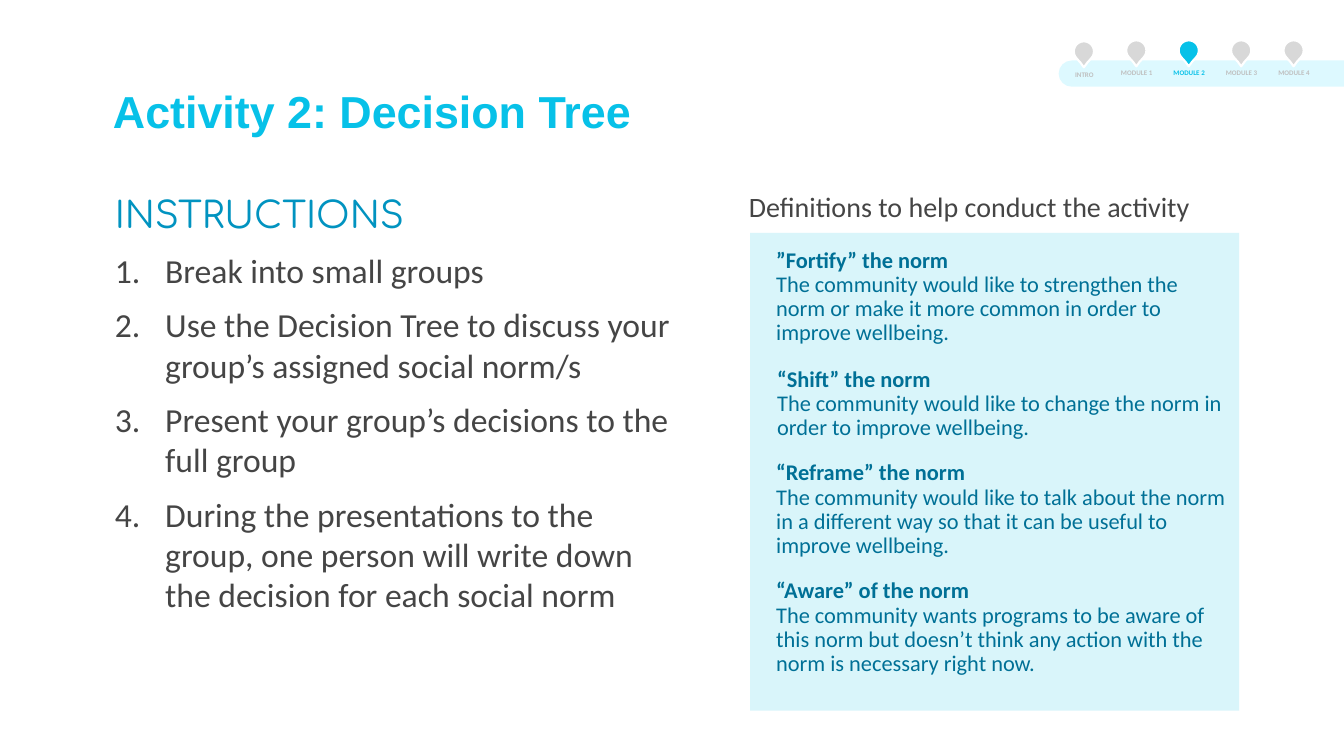
from lxml import etree
from pptx import Presentation
from pptx import util as u
from pptx.dml.color import RGBColor
from pptx.enum import shapes, text
from pptx.oxml import ns

COLORS = {
    "cyan": "07C1E8", "blue": "0193C0", "navy": "007096", "ink": "454545",
    "panel": "CDF2F9", "track": "BDF4FF", "pin": "D8D8D8", "label": "BFBFBF",
    "white": "FFFFFF",
}
STEPS = [
    "Break into small groups",
    "Use the Decision Tree to discuss your group’s assigned social norm/s",
    "Present your group’s decisions to the full group",
    "During the presentations to the group, one person will write down "
    "the decision for each social norm",
]
# Left, top, height, heading, meaning
NORMS = [
    (7.6, 2.42, 1.07, "”Fortify” the norm",
     "The community would like to strengthen the norm or make it more "
     "common in order to improve wellbeing."),
    (7.61, 3.6, 0.83, "“Shift” the norm",
     "The community would like to change the norm in order to improve "
     "wellbeing."),
    (7.6, 4.53, 1.07, "“Reframe” the norm",
     "The community would like to talk about the norm in a different way "
     "so that it can be useful to improve wellbeing."),
    (7.6, 5.7, 1.08, "“Aware” of the norm",
     "The community wants programs to be aware of this norm but doesn’t "
     "think any action with the norm is necessary right now."),
]
STAGES = ["INTRO", "MODULE 1", "MODULE 2", "MODULE 3", "MODULE 4"]
ACTIVE = "MODULE 2"


def color(name):
    return RGBColor.from_string(COLORS[name])


def sub(node, tag, **attrs):
    return etree.SubElement(node, ns.qn(tag), **attrs)


def fade(fill, percent):
    """Set the opacity of a solid fill element."""
    sub(fill[0], "a:alpha", val=str(percent * 1000))


def add_run(para, words, size=16, font="Calibri", tint="ink", bold=False):
    run = para.add_run()
    run.text = words
    run.font.size = u.Pt(size)
    run.font.name = font
    run.font.bold = bold
    run.font.color.rgb = color(tint)


def add_box(slide, left, top, width, height, inset=True):
    """Add an empty text box and return its frame."""
    box = slide.shapes.add_textbox(*map(u.Inches, (left, top, width, height)))
    frame = box.text_frame
    frame.word_wrap = True
    frame.vertical_anchor = text.MSO_ANCHOR.TOP
    if not inset:
        frame.margin_left = frame.margin_right = 0
        frame.margin_top = frame.margin_bottom = 0
    return frame


def add_shape(slide, kind, left, top, width, height, tint):
    area = map(u.Inches, (left, top, width, height))
    shape = slide.shapes.add_shape(kind, *area)
    shape.shadow.inherit = False
    shape.fill.solid()
    shape.fill.fore_color.rgb = color(tint)
    shape.line.fill.background()
    return shape


def add_step(frame, words):
    """Add one numbered paragraph with a hanging indent."""
    para = frame.add_paragraph()
    para.space_before = u.Pt(10)
    props = para._p.get_or_add_pPr()
    props.set("marL", str(u.Inches(0.5)))
    props.set("indent", str(u.Inches(-0.5)))
    sub(sub(props, "a:buClr"), "a:srgbClr", val=COLORS["ink"])
    sub(props, "a:buFont", typeface="Calibri")
    sub(props, "a:buAutoNum", type="arabicPeriod")
    add_run(para, words, size=24)


def add_norm(slide, left, top, height, head, words):
    para = add_box(slide, left, top, 4.69, height).paragraphs[0]
    para.line_spacing = 0.9
    add_run(para, head, tint="navy", bold=True)
    para.add_line_break()
    add_run(para, words, tint="navy")


def add_track(slide):
    """Add the pale band behind the stage pins."""
    line = slide.shapes.add_connector(
        shapes.MSO_CONNECTOR.STRAIGHT,
        *map(u.Inches, (10.63, 0.73, 13.33, 0.73)))
    line.line.width = u.Pt(18.75)
    line.line.color.rgb = color("track")
    props = line.line._get_or_add_ln()
    props.set("cap", "rnd")
    fade(props.find(ns.qn("a:solidFill")), 50)
    sub(line._element.spPr, "a:effectLst")


def add_stage(slide, index, name):
    on = name == ACTIVE
    drop = 0.01 if index == 0 else 0
    left = 10.65 + 0.52 * index
    pin = add_shape(slide, shapes.MSO_SHAPE.TEAR, left, 0.4 + drop, 0.2, 0.2,
                    "cyan" if on else "pin")
    pin.adjustments[0] = 1.12
    pin.rotation = 135
    pin.line.color.rgb = color("white")
    pin.line.width = u.Pt(1.5)
    frame = add_box(slide, left - 0.18, 0.63 + 2 * drop, 0.57, 0.27)
    para = frame.paragraphs[0]
    para.alignment = text.PP_ALIGN.CENTER
    add_run(para, name, size=5, tint="cyan" if on else "label", bold=True)


def main():
    deck = Presentation()
    deck.slide_width = u.Inches(13.33)
    deck.slide_height = u.Inches(7.5)
    slide = deck.slides.add_slide(deck.slide_layouts[6])

    # Title
    para = add_box(slide, 1.12, 0.89, 11.09, 0.37, inset=False).paragraphs[0]
    para.line_spacing = 0.9
    add_run(para, "Activity 2: Decision Tree", size=32, font="Arial",
            tint="cyan", bold=True)

    # Instructions
    frame = add_box(slide, 1.04, 1.86, 5.75, 5.2)
    add_run(frame.paragraphs[0], "INSTRUCTIONS", size=26, font="Comfortaa",
            tint="blue")
    for words in STEPS:
        add_step(frame, words)

    # Definitions
    frame = add_box(slide, 7.33, 1.83, 5.06, 0.44)
    add_run(frame.paragraphs[0], "Definitions to help conduct the activity",
            size=20)
    panel = add_shape(slide, shapes.MSO_SHAPE.RECTANGLE, 7.44, 2.31, 4.85,
                      4.74, "panel")
    fade(panel._element.spPr.find(ns.qn("a:solidFill")), 75)
    for norm in NORMS:
        add_norm(slide, *norm)

    # Progress pins
    add_track(slide)
    for index, name in enumerate(STAGES):
        add_stage(slide, index, name)

    deck.save("out.pptx")


if __name__ == "__main__":
    main()
